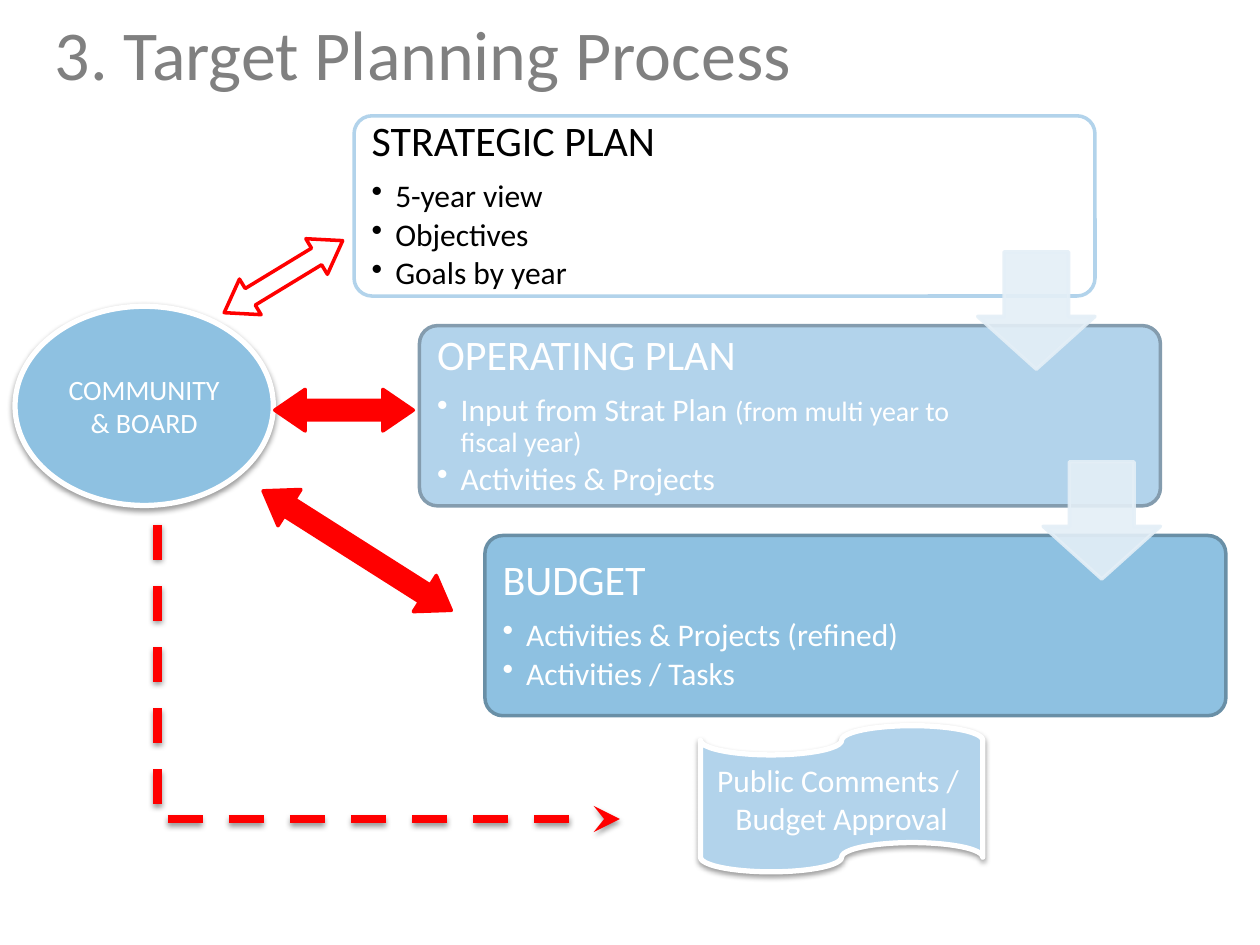
from dataclasses import dataclass
from typing import Optional

from lxml import etree
from pptx import Presentation
from pptx import util as u
from pptx.dml.color import RGBColor
from pptx.enum import dml, shapes, text
from pptx.oxml import ns

FONT = "Calibri"
COLORS = {
    "title": "808080",
    "black": "000000",
    "white": "FFFFFF",
    "light": "B2D3EB",
    "medium": "8EC1E1",
    "pale": "E4EFF7",
    "light_edge": "849CAE",
    "medium_edge": "698FA6",
    "red": "FF0000",
}
CARD_LEFT, CARD_TOP, CARD_WIDTH, CARD_HEIGHT = 202.3, 66.2, 423.4, 103
STEP_X, STEP_Y = 37.4, 119.9
CARD_PADDING, CARD_TEXT_WIDTH = 3, 313
ARROW_LEFT, ARROW_TOP, ARROW_SIZE = 558.7, 144, 67


@dataclass
class Box:
    left: float
    top: float
    width: float
    height: float


@dataclass
class Bullet:
    label: str
    remark: str = ""


@dataclass
class Plan:
    heading: str
    bullets: list[Bullet]
    fill: str
    edge: str
    ink: str


@dataclass
class DoubleArrow:
    box: Box
    rotation: float
    fill: str


@dataclass
class Callout:
    kind: shapes.MSO_SHAPE
    box: Box
    label: str
    size: float
    fill: str


@dataclass
class DashedLine:
    start: tuple[float, float]
    end: tuple[float, float]
    head: Optional[str] = None


PLANS = [
    Plan("STRATEGIC PLAN",
         [Bullet("5-year view"), Bullet("Objectives"), Bullet("Goals by year")],
         "white", "light", "black"),
    Plan("OPERATING PLAN",
         [Bullet("Input from Strat Plan ", "(from multi year to fiscal year)"),
          Bullet("Activities & Projects")],
         "light", "light_edge", "white"),
    Plan("BUDGET",
         [Bullet("Activities & Projects (refined)"), Bullet("Activities / Tasks")],
         "medium", "medium_edge", "white"),
]
DOUBLE_ARROWS = [
    DoubleArrow(Box(122.4, 146.2, 79.2, 23.8), 328.7, "white"),
    DoubleArrow(Box(157, 222.5, 79.2, 23.8), 0, "red"),
    DoubleArrow(Box(140.4, 302.4, 127.4, 24.5), 32.4, "red"),
]
CALLOUTS = [
    Callout(shapes.MSO_SHAPE.OVAL, Box(8.6, 175, 147.6, 113.8),
            "COMMUNITY & BOARD", 16, "medium"),
    Callout(shapes.MSO_SHAPE.FLOWCHART_PUNCHED_TAPE, Box(400.3, 414.7, 161.3, 83.5),
            "Public Comments / \vBudget Approval", 18, "light"),
]
DASHED_LINES = [
    DashedLine((90, 300), (90, 468)),
    DashedLine((95.8, 468), (354.2, 468), "stealth"),
]


def color(name: str) -> RGBColor:
    return RGBColor.from_string(COLORS[name])


def style_run(run, size: float, ink: str) -> None:
    run.font.name = FONT
    run.font.size = u.Pt(size)
    run.font.color.rgb = color(ink)


def add_child(parent, tag: str, **attributes: str):
    return etree.SubElement(parent, ns.qn(tag), **attributes)


def add_shadow(shape) -> None:
    properties = shape._element.spPr
    effects = properties.find(ns.qn("a:effectLst"))
    if effects is None:
        effects = add_child(properties, "a:effectLst")
    shadow = add_child(effects, "a:outerShdw", blurRad=str(u.Pt(3.1)),
                       dist=str(u.Pt(1.6)), dir="5400000", rotWithShape="0")
    tint = add_child(shadow, "a:srgbClr", val=COLORS["black"])
    add_child(tint, "a:alpha", val="38000")


def add_figure(slide, kind, box: Box, fill: str, edge: str, weight: float,
               adjustments: tuple[float, ...] = ()):
    shape = slide.shapes.add_shape(kind, u.Pt(box.left), u.Pt(box.top),
                                   u.Pt(box.width), u.Pt(box.height))
    shape.shadow.inherit = False
    shape.fill.solid()
    shape.fill.fore_color.rgb = color(fill)
    shape.line.color.rgb = color(edge)
    shape.line.width = u.Pt(weight)
    for index, value in enumerate(adjustments):
        shape.adjustments[index] = value
    return shape


def add_title(slide, label: str) -> None:
    title = slide.shapes.title
    title.left, title.top = u.Pt(24), u.Pt(6)
    title.width, title.height = u.Pt(672), u.Pt(48)
    title.text_frame.text = label
    title.text_frame.auto_size = text.MSO_AUTO_SIZE.NONE
    title.text_frame.vertical_anchor = text.MSO_ANCHOR.MIDDLE
    paragraph = title.text_frame.paragraphs[0]
    paragraph.alignment = text.PP_ALIGN.LEFT
    style_run(paragraph.runs[0], 40, "title")


def add_bullet(frame, bullet: Bullet, ink: str) -> None:
    paragraph = frame.add_paragraph()
    paragraph.text = bullet.label
    paragraph.level = 1
    paragraph.line_spacing = 0.9
    paragraph.space_after = u.Pt(2.7)
    style_run(paragraph.runs[0], 18, ink)
    if bullet.remark:
        run = paragraph.add_run()
        run.text = bullet.remark
        style_run(run, 16, ink)
    properties = paragraph._p.get_or_add_pPr()
    properties.set("marL", str(u.Pt(13.5)))
    properties.set("indent", str(-u.Pt(13.5)))
    add_child(properties, "a:buChar", char="•")


def add_plan(slide, plan: Plan, index: int) -> None:
    box = Box(CARD_LEFT + index * STEP_X, CARD_TOP + index * STEP_Y,
              CARD_WIDTH, CARD_HEIGHT)
    add_figure(slide, shapes.MSO_SHAPE.ROUNDED_RECTANGLE, box,
               plan.fill, plan.edge, 2, (0.1,))
    text_box = slide.shapes.add_textbox(
        u.Pt(box.left + CARD_PADDING), u.Pt(box.top + CARD_PADDING),
        u.Pt(CARD_TEXT_WIDTH), u.Pt(box.height - 2 * CARD_PADDING))
    frame = text_box.text_frame
    frame.word_wrap = True
    frame.vertical_anchor = text.MSO_ANCHOR.MIDDLE
    frame.margin_left = frame.margin_right = u.Pt(7.2)
    frame.margin_top = frame.margin_bottom = u.Pt(7.2)
    frame.text = plan.heading
    heading = frame.paragraphs[0]
    heading.line_spacing = 0.9
    heading.space_after = u.Pt(8.4)
    style_run(heading.runs[0], 24, plan.ink)
    for bullet in plan.bullets:
        add_bullet(frame, bullet, plan.ink)


def add_down_arrow(slide, index: int) -> None:
    box = Box(ARROW_LEFT + index * STEP_X, ARROW_TOP + index * STEP_Y,
              ARROW_SIZE, ARROW_SIZE)
    shape = add_figure(slide, shapes.MSO_SHAPE.DOWN_ARROW, box,
                       "pale", "pale", 2, (0.55, 0.45))
    for tint in shape._element.spPr.iter(ns.qn("a:srgbClr")):
        add_child(tint, "a:alpha", val="90000")


def add_callout(slide, callout: Callout) -> None:
    shape = add_figure(slide, callout.kind, callout.box, callout.fill, "white", 3)
    add_shadow(shape)
    frame = shape.text_frame
    frame.text = callout.label
    frame.word_wrap = True
    frame.vertical_anchor = text.MSO_ANCHOR.MIDDLE
    paragraph = frame.paragraphs[0]
    paragraph.alignment = text.PP_ALIGN.CENTER
    for run in paragraph.runs:
        style_run(run, callout.size, "white")


def add_double_arrow(slide, arrow: DoubleArrow) -> None:
    shape = add_figure(slide, shapes.MSO_SHAPE.LEFT_RIGHT_ARROW, arrow.box,
                       arrow.fill, "red", 2, (0.466, 0.731))
    shape.rotation = arrow.rotation


def add_dashed_line(slide, dashed: DashedLine) -> None:
    points = [u.Pt(value) for value in dashed.start + dashed.end]
    connector = slide.shapes.add_connector(shapes.MSO_CONNECTOR.STRAIGHT, *points)
    connector.line.color.rgb = color("red")
    connector.line.width = u.Pt(5)
    connector.line.dash_style = dml.MSO_LINE.DASH
    if dashed.head:
        add_child(connector.line._get_or_add_ln(), "a:tailEnd", type=dashed.head)
    add_shadow(connector)


def main() -> None:
    presentation = Presentation()
    presentation.slide_width, presentation.slide_height = u.Pt(720), u.Pt(540)
    slide = presentation.slides.add_slide(presentation.slide_layouts[5])
    add_title(slide, "3. Target Planning Process")
    for index, plan in enumerate(PLANS):
        add_plan(slide, plan, index)
    for index in range(len(PLANS) - 1):
        add_down_arrow(slide, index)
    for callout in CALLOUTS:
        add_callout(slide, callout)
    for arrow in DOUBLE_ARROWS:
        add_double_arrow(slide, arrow)
    for dashed in DASHED_LINES:
        add_dashed_line(slide, dashed)
    presentation.save("out.pptx")


if __name__ == "__main__":
    main()
